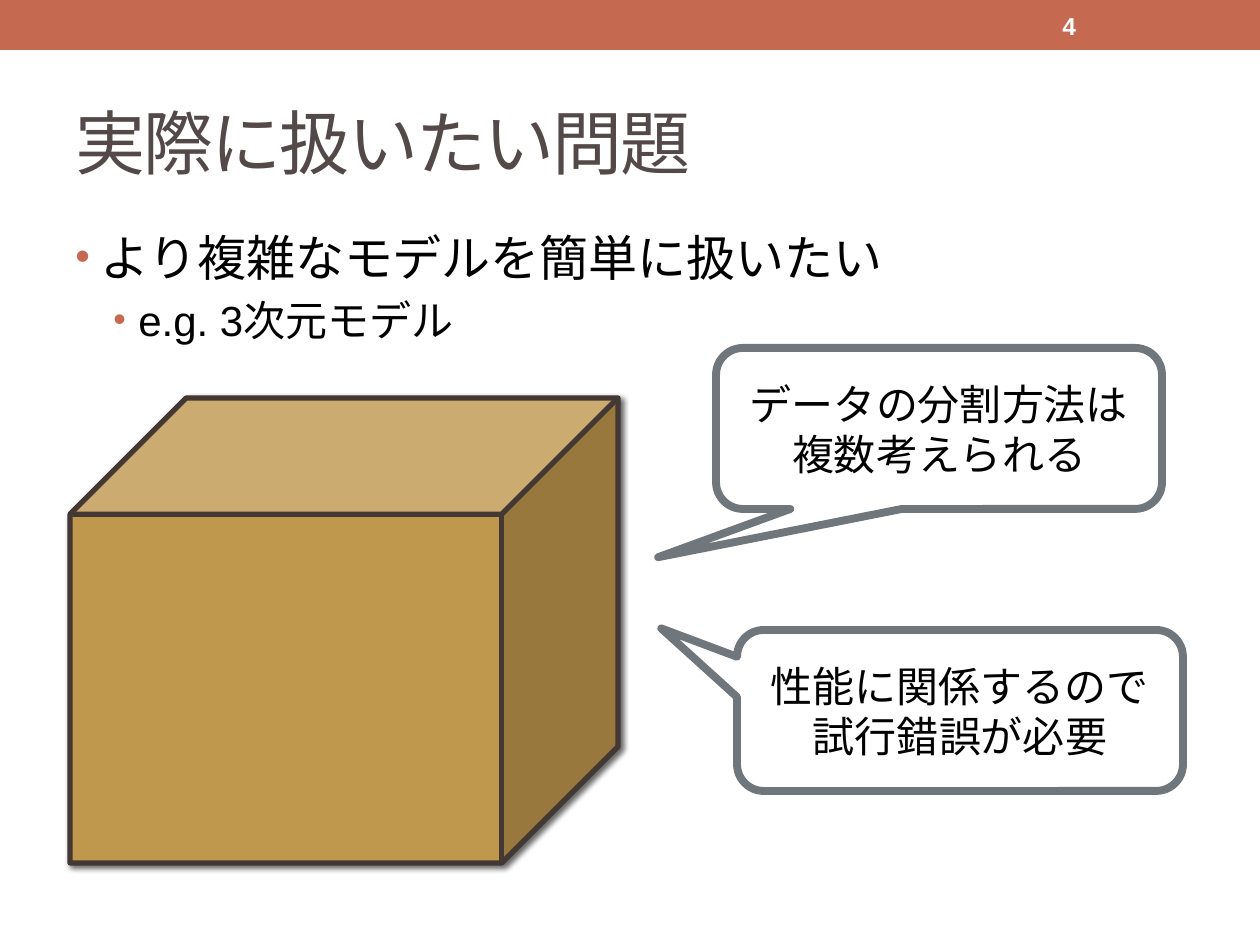
from dataclasses import dataclass

from lxml.etree import SubElement
from pptx import Presentation
from pptx.dml.color import RGBColor
from pptx.enum.lang import MSO_LANGUAGE_ID
from pptx.enum.shapes import MSO_SHAPE
from pptx.enum.text import MSO_ANCHOR, PP_ALIGN
from pptx.oxml.ns import qn
from pptx.util import Emu, Pt


@dataclass(frozen=True)
class Theme:
    font: str = "Arial"
    accent: str = "C66951"
    title: str = "534949"
    ink: str = "000000"
    paper: str = "FFFFFF"
    box: str = "BF974D"
    edge: str = "443835"
    frame: str = "6F777D"
    title_size: int = 40
    body_size: int = 28
    note_size: int = 24
    page_size: int = 14


THEME = Theme()


def px(count):
    return Emu(round(count * 914400 / 126))


def style(para, size, color, bold=False):
    for run in para.runs:
        font = run.font
        font.name, font.size, font.bold = THEME.font, Pt(size), bold
        font.color.rgb = RGBColor.from_string(color)
        font.language_id = MSO_LANGUAGE_ID.JAPANESE


def add_text(slide, at, text, size, color, anchor=MSO_ANCHOR.MIDDLE, bold=False):
    frame = slide.shapes.add_textbox(*map(px, at)).text_frame
    frame.word_wrap = True
    frame.vertical_anchor = anchor
    frame.text = text
    for para in frame.paragraphs:
        style(para, size, color, bold)
    return frame


def add_bullet(para, level, size):
    para.level = level
    para.space_before = Pt(round(size * 0.2, 1))
    style(para, size, THEME.ink)
    props = para._p.get_or_add_pPr()
    props.set("marL", str(px(25 + 38 * level)))
    props.set("indent", str(px(-25)))
    color = SubElement(props, qn("a:buClr"))
    SubElement(color, qn("a:srgbClr"), val=THEME.accent)
    SubElement(props, qn("a:buSzPct"), val="85000")
    SubElement(props, qn("a:buFont"), typeface=THEME.font)
    SubElement(props, qn("a:buChar"), char="•")


def add_shape(slide, kind, at, fill, line=None, width=0):
    shape = slide.shapes.add_shape(kind, *map(px, at))
    shape.shadow.inherit = False
    shape.fill.solid()
    shape.fill.fore_color.rgb = RGBColor.from_string(fill)
    if line:
        shape.line.color.rgb = RGBColor.from_string(line)
        shape.line.width = Pt(width)
    else:
        shape.line.fill.background()
    return shape


def add_shadow(shape):
    effects = shape._element.spPr.find(qn("a:effectLst"))
    shadow = SubElement(effects, qn("a:outerShdw"), blurRad=str(Pt(3)),
                        dist=str(Pt(2)), dir="2700000", rotWithShape="0")
    color = SubElement(shadow, qn("a:srgbClr"), val=THEME.ink)
    SubElement(color, qn("a:alpha"), val="60000")


def add_callout(slide, left, top, tip, text):
    """Add a speech bubble; tip is the pointer's offset from the centre, as shares of its size."""
    shape = add_shape(slide, MSO_SHAPE.ROUNDED_RECTANGULAR_CALLOUT,
                      (left, top, 446, 161), THEME.paper, THEME.frame, 4.5)
    for index, value in enumerate(tip):
        shape.adjustments[index] = value
    frame = shape.text_frame
    frame.vertical_anchor = MSO_ANCHOR.MIDDLE
    frame.text = text
    for para in frame.paragraphs:
        para.alignment = PP_ALIGN.CENTER
        style(para, THEME.note_size, THEME.ink)


def main():
    deck = Presentation()
    deck.slide_width, deck.slide_height = px(1260), px(945)
    slide = deck.slides.add_slide(deck.slide_layouts[6])

    add_shape(slide, MSO_SHAPE.RECTANGLE, (0, 0, 1260, 50), THEME.accent)
    title = add_text(slide, (63, 73, 1134, 136), "実際に扱いたい問題",
                     THEME.title_size, THEME.title)
    title.paragraphs[0].runs[0].font._element.set("spc", "-100")

    body = add_text(slide, (63, 221, 1134, 672),
                    "より複雑なモデルを簡単に扱いたい\ne.g. 3次元モデル",
                    THEME.body_size, THEME.ink, MSO_ANCHOR.TOP)
    sizes = (THEME.body_size, THEME.note_size)
    for level, (para, size) in enumerate(zip(body.paragraphs, sizes)):
        add_bullet(para, level, size)

    add_text(slide, (1050, 3, 147, 45), "4", THEME.page_size, THEME.paper, bold=True)

    cube = add_shape(slide, MSO_SHAPE.CUBE, (70, 398, 548, 465),
                     THEME.box, THEME.edge, 3)
    add_shadow(cube)

    add_callout(slide, 716, 348, (-0.63, 0.8), "データの分割方法は\n複数考えられる")
    add_callout(slide, 737, 630, (-0.67, -0.51), "性能に関係するので\n試行錯誤が必要")
    deck.save("out.pptx")


if __name__ == "__main__":
    main()
